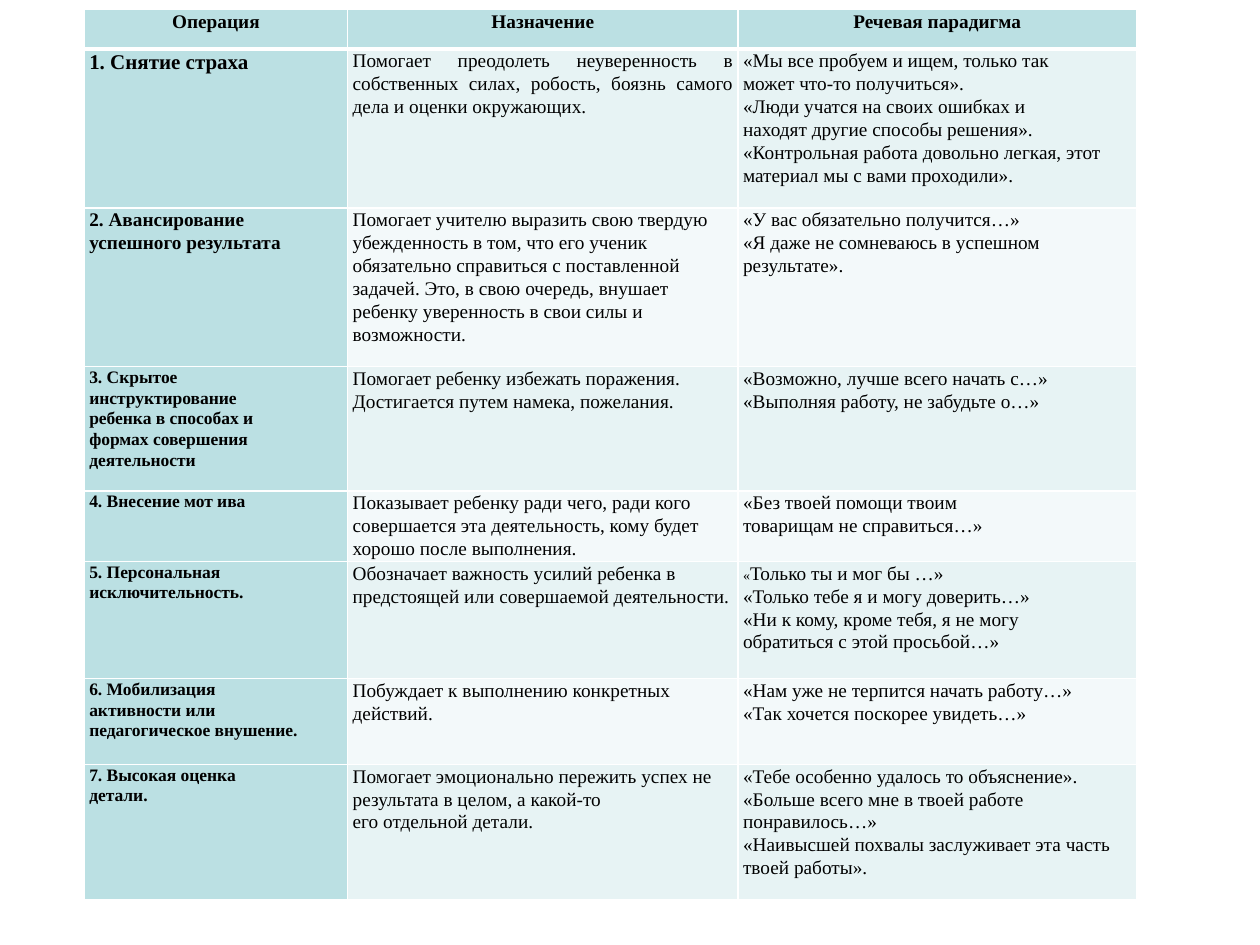
import pptx
import pptx.dml.color
import pptx.enum.text
import pptx.oxml
import pptx.oxml.ns
import pptx.util

Cm = pptx.util.Cm
Pt = pptx.util.Pt
RGBColor = pptx.dml.color.RGBColor
PP_ALIGN = pptx.enum.text.PP_ALIGN

FONT = "Times New Roman"
BLACK = RGBColor(0x00, 0x00, 0x00)
WHITE = RGBColor(0xFF, 0xFF, 0xFF)
TEAL = RGBColor(0xBB, 0xE0, 0xE3)
BAND_DARK = RGBColor(0xE7, 0xF3, 0xF4)
BAND_LIGHT = RGBColor(0xF3, 0xF9, 0xFA)

COL_WIDTHS = [5.31, 7.87, 8.03]
ROW_HEIGHTS = [0.8, 3.2, 3.2, 2.51, 1.42, 2.36, 1.73, 2.72]
TITLE_SIZES = [11, 12, 11, 10, 10, 10, 10, 10]

# Each line of a cell is a paragraph.
ROWS = [
    ("Операция", "Назначение", "Речевая парадигма"),
    ("1. Снятие страха",
     "Помогает преодолеть неуверенность в собственных силах, робость, "
     "боязнь самого дела и оценки окружающих.",
     "«Мы все пробуем и ищем, только так\n"
     "может что-то получиться».\n"
     "«Люди учатся на своих ошибках и\n"
     "находят другие способы решения».\n"
     "«Контрольная работа довольно легкая, этот материал мы с вами проходили»."),
    ("2. Авансирование\nуспешного результата",
     "Помогает учителю выразить свою твердую убежденность в том, что его ученик\n"
     "обязательно справиться с поставленной задачей. Это, в свою очередь, внушает\n"
     "ребенку уверенность в свои силы и возможности.",
     "«У вас обязательно получится…»\n"
     "«Я даже не сомневаюсь в успешном\n"
     "результате»."),
    ("3. Скрытое\nинструктирование\nребенка в способах и\n"
     "формах совершения\nдеятельности",
     "Помогает ребенку избежать поражения.\n"
     "Достигается путем намека, пожелания.",
     "«Возможно, лучше всего начать с…»\n"
     "«Выполняя работу, не забудьте о…»"),
    ("4. Внесение мот ива",
     "Показывает ребенку ради чего, ради кого совершается эта деятельность, кому будет\n"
     "хорошо после выполнения.",
     "«Без твоей помощи твоим\nтоварищам не справиться…»"),
    ("5. Персональная\nисключительность.",
     "Обозначает важность усилий ребенка в предстоящей или совершаемой деятельности.",
     "«Только ты и мог бы …»\n"
     "«Только тебе я и могу доверить…»\n"
     "«Ни к кому, кроме тебя, я не могу\n"
     "обратиться с этой просьбой…»"),
    ("6. Мобилизация\nактивности или\nпедагогическое внушение.",
     "Побуждает к выполнению конкретных действий.",
     "«Нам уже не терпится начать работу…»\n"
     "«Так хочется поскорее увидеть…»"),
    ("7. Высокая оценка\nдетали.",
     "Помогает эмоционально пережить успех не результата в целом, а какой-то\n"
     "его отдельной детали.",
     "«Тебе особенно удалось то объяснение».\n"
     "«Больше всего мне в твоей работе\n"
     "понравилось…»\n"
     "«Наивысшей похвалы заслуживает эта часть твоей работы»."),
]


def set_borders(cell, widths):
    """Draw white borders; widths maps the sides L, R, T, B to points."""
    tcPr = cell._tc.get_or_add_tcPr()
    for i, side in enumerate("LRTB"):
        tcPr.insert(i, pptx.oxml.parse_xml(
            f'<a:ln{side} {pptx.oxml.ns.nsdecls("a")} w="{Pt(widths[side])}">'
            f'<a:solidFill><a:srgbClr val="{WHITE}"/></a:solidFill></a:ln{side}>'))


def fill_cell(cell, text, size, bold, align, fill):
    cell.margin_left = cell.margin_right = Cm(0.1)
    cell.margin_top = cell.margin_bottom = 0
    cell.fill.solid()
    cell.fill.fore_color.rgb = fill
    cell.text_frame.text = text
    for p in cell.text_frame.paragraphs:
        p.alignment = align
        p.line_spacing = 1.07
        p.font.name = FONT
        p.font.size = Pt(size)
        p.font.bold = bold
        p.font.color.rgb = BLACK


def shrink_first_letter(p, size):
    r = p.runs[0]
    text = r.text
    r.text = text[0]
    r.font.size = Pt(size)
    p.add_run().text = text[1:]


def add_operations_table(slide, left, top):
    frame = slide.shapes.add_table(
        len(ROWS), len(COL_WIDTHS), left, top,
        Cm(sum(COL_WIDTHS)), Cm(sum(ROW_HEIGHTS)))
    table = frame.table
    table.first_col = True
    for column, width in zip(table.columns, COL_WIDTHS):
        column.width = Cm(width)
    for row, height in zip(table.rows, ROW_HEIGHTS):
        row.height = Cm(height)

    for i, texts in enumerate(ROWS):
        band = BAND_DARK if i % 2 else BAND_LIGHT
        for j, text in enumerate(texts):
            cell = table.cell(i, j)
            heading = i == 0 or j == 0
            fill_cell(cell, text, TITLE_SIZES[i] if j == 0 else 11, heading,
                      PP_ALIGN.CENTER if i == 0 else PP_ALIGN.LEFT,
                      TEAL if heading else band)
            set_borders(cell, {"L": 1, "R": 1, "T": 3 if i == 1 else 1,
                               "B": 3 if i == 0 else 1})
    table.cell(1, 1).text_frame.paragraphs[0].alignment = PP_ALIGN.JUSTIFY
    shrink_first_letter(table.cell(5, 2).text_frame.paragraphs[0], 8)


def main():
    prs = pptx.Presentation()
    prs.slide_width, prs.slide_height = Cm(25.4), Cm(19.05)
    slide = prs.slides.add_slide(prs.slide_layouts[6])
    add_operations_table(slide, Cm(1.7), Cm(0.19))
    prs.save("out.pptx")


if __name__ == "__main__":
    main()
